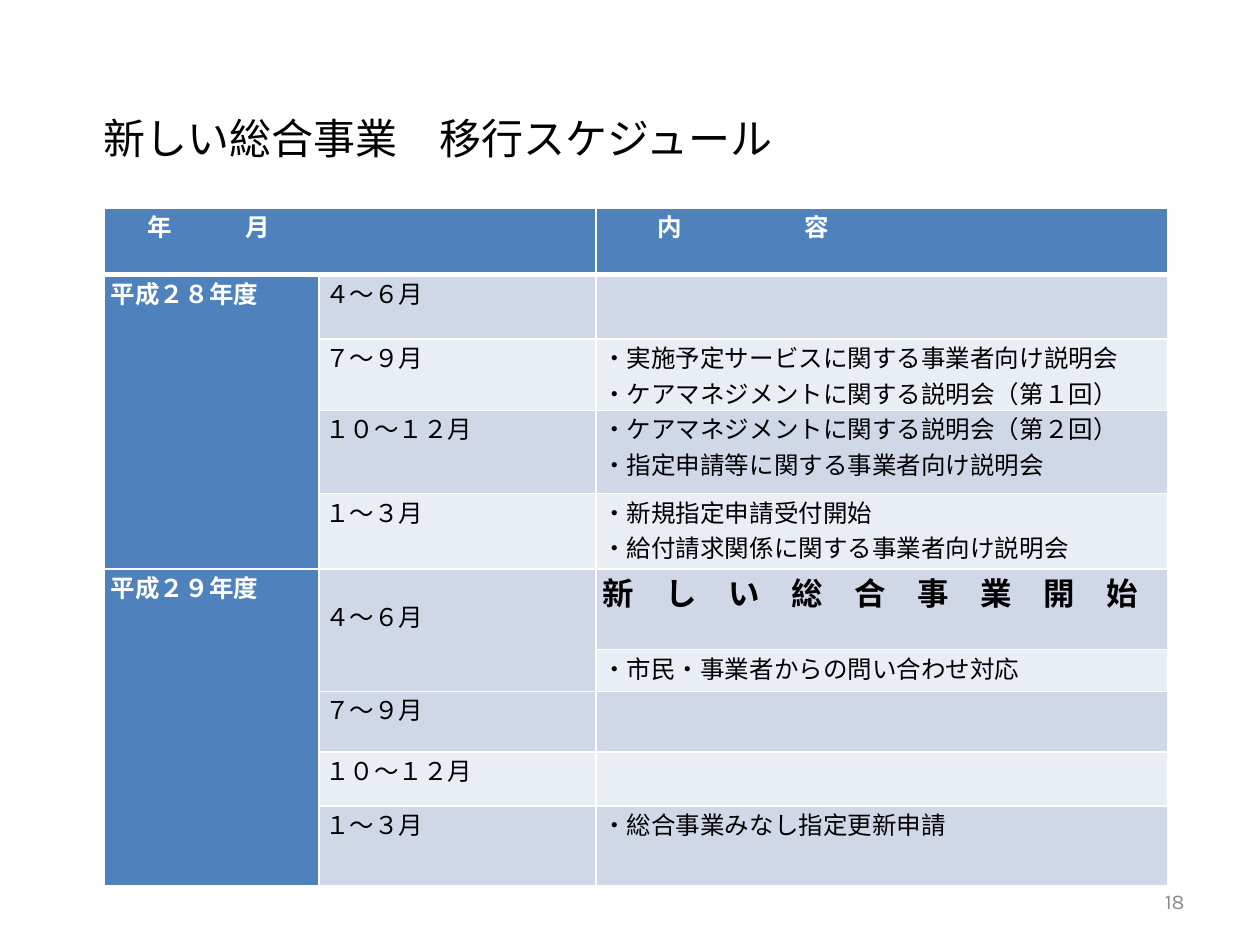
from lxml.etree import SubElement
from pptx import Presentation
from pptx.dml.color import RGBColor
from pptx.enum.text import MSO_ANCHOR as Anchor, PP_ALIGN as Align
from pptx.oxml.ns import qn
from pptx.util import Inches, Pt

COLORS = {"header": "4F81BD", "band_dark": "D0D8E8", "band_light": "E9EDF4",
          "text": "000000", "white": "FFFFFF", "page_number": "8C8C8C"}
COLUMN_WIDTHS = [1.7, 2.2, 4.54]
ROW_HEIGHTS = [0.53, 0.51, 0.56, 0.66, 0.6, 0.64, 0.33, 0.48, 0.43, 0.63]
START_ROW = 5
MERGES = [(0, 0, 0, 1), (1, 0, 4, 0), (5, 0, 9, 0), (5, 1, 6, 1)]
SCHEDULE = [
    ["年　　　月", "", "内　　　　　容"],
    ["平成２８年度", "４～６月", ""],
    ["", "７～９月", "・実施予定サービスに関する事業者向け説明会\n"
                     "・ケアマネジメントに関する説明会（第１回）"],
    ["", "１０～１２月", "・ケアマネジメントに関する説明会（第２回）\n"
                         "・指定申請等に関する事業者向け説明会"],
    ["", "１～３月", "・新規指定申請受付開始\n"
                     "・給付請求関係に関する事業者向け説明会"],
    ["平成２９年度", "４～６月", "新　し　い　総　合　事　業　開　始"],
    ["", "", "・市民・事業者からの問い合わせ対応"],
    ["", "７～９月", ""],
    ["", "１０～１２月", ""],
    ["", "１～３月", "・総合事業みなし指定更新申請"],
]


def rgb(name):
    return RGBColor.from_string(COLORS[name])


def format_text(frame, color, size, font="Karla", bold=False,
                align=Align.JUSTIFY, indent=0):
    for paragraph in frame.paragraphs:
        paragraph.alignment = align
        properties = paragraph._p.get_or_add_pPr()
        for key, value in {"marL": 0, "indent": Inches(indent)}.items():
            properties.set(key, str(value))
        for run in paragraph.runs:
            values = {"name": font, "size": Pt(size), "bold": bold}
            for key, value in values.items():
                setattr(run.font, key, value)
            run.font.color.rgb = rgb(color)


def add_borders(cell, bottom_width):
    widths = {"lnL": 1, "lnR": 1, "lnT": 1, "lnB": bottom_width}
    properties = cell._tc.get_or_add_tcPr()
    for side, width in widths.items():
        line = SubElement(properties, qn(f"a:{side}"), w=str(Pt(width)))
        fill = SubElement(line, qn("a:solidFill"))
        SubElement(fill, qn("a:srgbClr"), val=COLORS["white"])


def format_cell(cell, row, column):
    is_header = row == 0 or column == 0
    is_start = (row, column) == (START_ROW, 2)
    # The period of the first quarter sits lower in its two merged rows.
    top = 0.23 if (row, column) == (START_ROW, 1) else 0
    margins = {"margin_left": 0.05, "margin_right": 0.05,
               "margin_top": top, "margin_bottom": 0}
    for key, value in margins.items():
        setattr(cell, key, Inches(value))
    add_borders(cell, 3 if row == 0 else 1)
    cell.fill.solid()
    band = "band_dark" if row % 2 else "band_light"
    cell.fill.fore_color.rgb = rgb("header" if is_header else band)
    format_text(cell.text_frame, "white" if is_header else "text",
                18 if is_start else 14, "Arial" if is_start else "Karla",
                is_header or is_start,
                indent={0: 0.29, 2: 0.44}.get(column, 0) if row == 0 else 0)


def add_schedule(slide, left, top):
    table = slide.shapes.add_table(
        len(ROW_HEIGHTS), len(COLUMN_WIDTHS), Inches(left), Inches(top),
        Inches(sum(COLUMN_WIDTHS)), Inches(sum(ROW_HEIGHTS))).table
    for column, width in zip(table.columns, COLUMN_WIDTHS):
        column.width = Inches(width)
    for row, height in zip(table.rows, ROW_HEIGHTS):
        row.height = Inches(height)
    for first_row, first_column, last_row, last_column in MERGES:
        table.cell(first_row, first_column).merge(
            table.cell(last_row, last_column))
    for row, texts in enumerate(SCHEDULE):
        for column, text in enumerate(texts):
            cell = table.cell(row, column)
            cell.text = text
            format_cell(cell, row, column)


def place_title(slide, left, top, width, height):
    title = slide.shapes.title
    box = {"left": left, "top": top, "width": width, "height": height}
    for key, value in box.items():
        setattr(title, key, Inches(value))
    frame = title.text_frame
    frame.text = "新しい総合事業　移行スケジュール"
    frame.word_wrap = False
    frame.vertical_anchor = Anchor.TOP
    format_text(frame, "text", 24, "Arial", align=Align.LEFT, indent=0.44)


def add_page_number(slide, left, top, width, height):
    frame = slide.shapes.add_textbox(
        Inches(left), Inches(top), Inches(width), Inches(height)).text_frame
    frame.text = "18"
    frame.word_wrap = True
    frame.vertical_anchor = Anchor.MIDDLE
    format_text(frame, "page_number", 12, align=Align.RIGHT)


def main():
    deck = Presentation()
    deck.slide_width, deck.slide_height = Inches(10), Inches(7.5)
    slide = deck.slides.add_slide(deck.slide_layouts.get_by_name("Title Only"))
    place_title(slide, 0.28, 0.84, 6.03, 0.81)
    add_schedule(slide, 0.83, 1.65)
    add_page_number(slide, 7.17, 6.95, 2.33, 0.4)
    deck.save("out.pptx")


if __name__ == "__main__":
    main()
